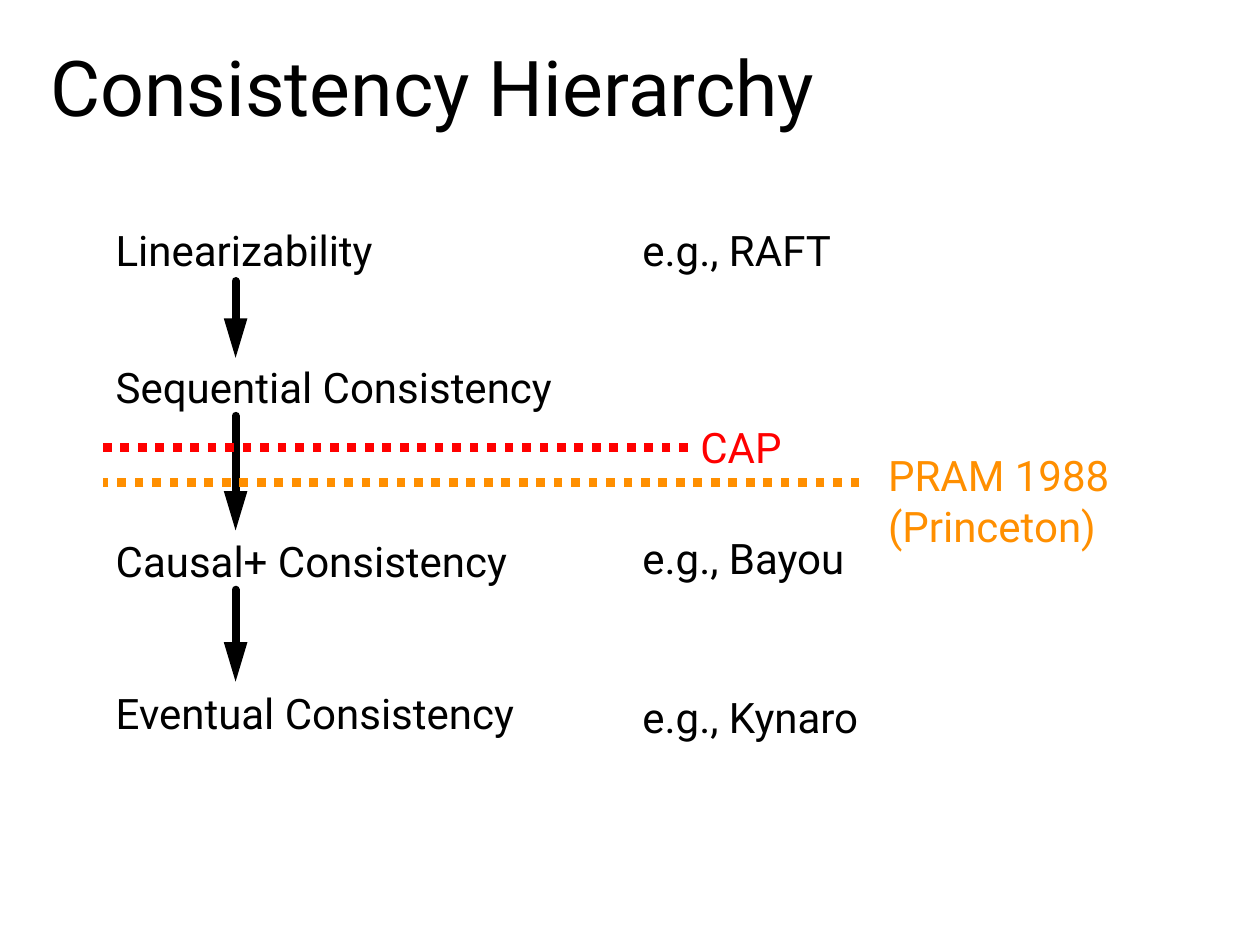
from dataclasses import dataclass

import pptx
import pptx.dml.color
import pptx.enum.dml
import pptx.enum.shapes
import pptx.enum.text
import pptx.oxml.ns
import pptx.util
from lxml import etree
from pptx.dml.color import RGBColor
from pptx.util import Inches

BLACK = RGBColor(0x00, 0x00, 0x00)
RED = RGBColor(0xFF, 0x00, 0x00)
ORANGE = RGBColor(0xFF, 0x8F, 0x00)
FONT = "Roboto"

MODEL_LEFT = 0.82
EXAMPLE_LEFT = 5
ARROW_X = 1.87
LABEL_HEIGHT = 0.5


@dataclass
class Label:
    text: str
    left: float
    top: float
    width: float
    height: float = LABEL_HEIGHT
    color: RGBColor = BLACK


@dataclass
class Arrow:
    top: float
    bottom: float


MODELS = [
    Label("Linearizability", MODEL_LEFT, 1.73, 2.33),
    Label("Sequential Consistency", MODEL_LEFT, 2.82, 3.86),
    Label("Causal+ Consistency", MODEL_LEFT, 4.2, 3.49),
    Label("Eventual Consistency", MODEL_LEFT, 5.41, 3.56),
]
EXAMPLES = [
    Label("e.g., RAFT", EXAMPLE_LEFT, 1.73, 1.82),
    Label("e.g., Bayou", EXAMPLE_LEFT, 4.18, 1.95),
    Label("e.g., Kynaro", EXAMPLE_LEFT, 5.44, 2.25),
]
ARROWS = [Arrow(2.23, 2.84), Arrow(3.3, 4.21), Arrow(4.68, 5.41)]
CAP = Label("CAP", 5.46, 3.3, 0.89, color=RED)
PRAM = Label("PRAM 1988\n(Princeton)", 6.95, 3.52, 2.03, 0.91, ORANGE)


def add_text(slide, label: Label, size: int = 24):
    box = slide.shapes.add_textbox(
        Inches(label.left), Inches(label.top), Inches(label.width), Inches(label.height)
    )
    frame = box.text_frame
    frame.text = label.text
    frame.word_wrap = False
    for paragraph in frame.paragraphs:
        for run in paragraph.runs:
            run.font.name = FONT
            run.font.size = pptx.util.Pt(size)
            run.font.color.rgb = label.color
    return box


def add_label(slide, label: Label):
    box = add_text(slide, label)
    box.text_frame.auto_size = pptx.enum.text.MSO_AUTO_SIZE.SHAPE_TO_FIT_TEXT
    return box


def add_title(slide, title: Label) -> None:
    frame = add_text(slide, title, 44).text_frame
    frame.word_wrap = True
    frame.vertical_anchor = pptx.enum.text.MSO_ANCHOR.MIDDLE
    frame.paragraphs[0].line_spacing = 0.9


def add_line(slide, x1: float, y1: float, x2: float, y2: float,
             color: RGBColor, width: float):
    line = slide.shapes.add_connector(
        pptx.enum.shapes.MSO_CONNECTOR.STRAIGHT,
        Inches(x1), Inches(y1), Inches(x2), Inches(y2),
    )
    line.line.color.rgb = color
    line.line.width = pptx.util.Pt(width)
    etree.SubElement(line._element.spPr, pptx.oxml.ns.qn("a:effectLst"))
    return line


def add_arrow(slide, arrow: Arrow) -> None:
    line = add_line(slide, ARROW_X, arrow.top, ARROW_X, arrow.bottom, BLACK, 4.5)
    outline = line.line._get_or_add_ln()
    outline.set("cap", "rnd")
    etree.SubElement(outline, pptx.oxml.ns.qn("a:tailEnd"),
                     type="triangle", w="med", len="lg")


def add_boundary(slide, right: float, y: float, color: RGBColor):
    """Dotted line marking a limit between two consistency models."""
    line = add_line(slide, right, y, MODEL_LEFT, y, color, 5)
    line.line.dash_style = pptx.enum.dml.MSO_LINE.ROUND_DOT
    return line


def main() -> None:
    deck = pptx.Presentation()
    deck.slide_width, deck.slide_height = Inches(10), Inches(7.5)
    slide = deck.slides.add_slide(deck.slide_layouts[6])

    add_title(slide, Label("Consistency Hierarchy", 0.3, 0, 9.4, 1.45))
    for label in MODELS + EXAMPLES:
        add_label(slide, label)
    for arrow in ARROWS:
        add_arrow(slide, arrow)

    cap_box = add_label(slide, CAP)
    cap_line = add_boundary(slide, CAP.left, CAP.top + CAP.height / 2, CAP.color)
    cap_line.begin_connect(cap_box, 1)

    add_boundary(slide, 6.82, 3.83, PRAM.color)
    add_label(slide, PRAM)

    deck.save("out.pptx")


if __name__ == "__main__":
    main()
